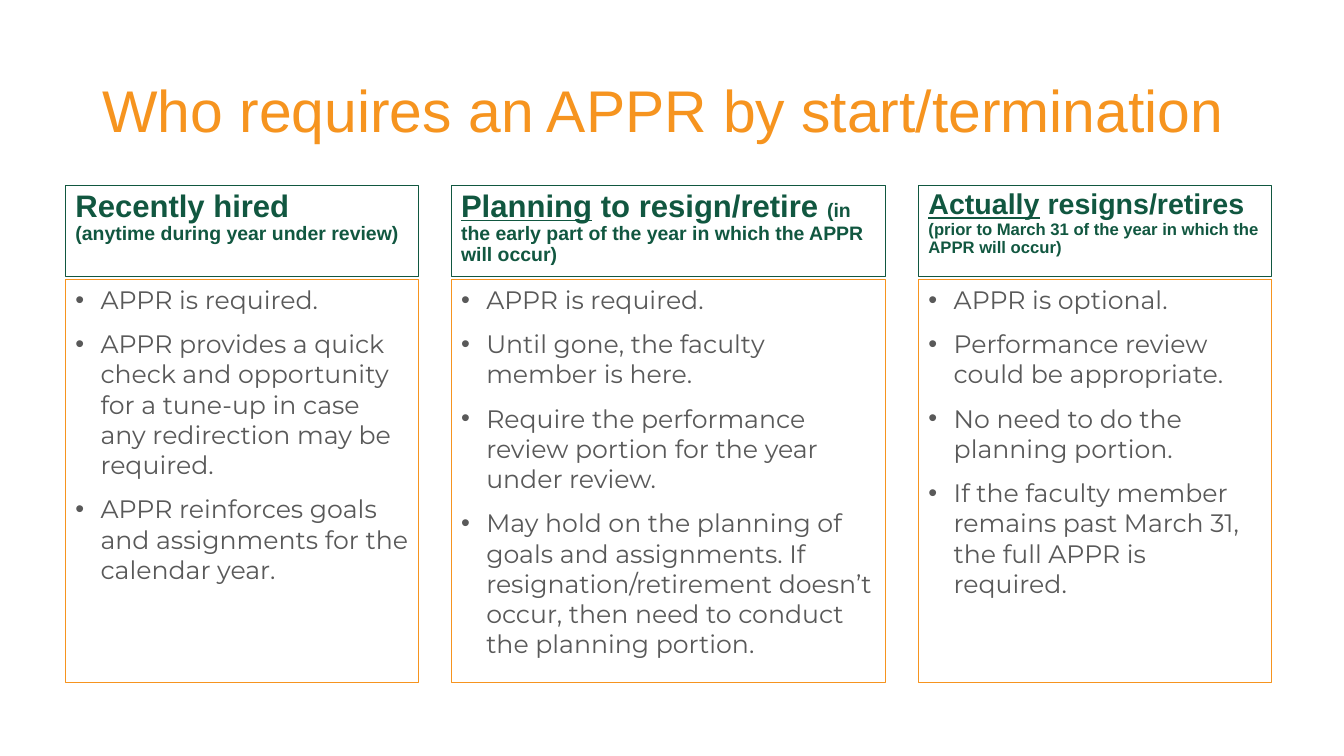
from dataclasses import dataclass

from lxml import etree
from pptx import Presentation, dml, util as u
from pptx.dml import color
from pptx.enum import shapes, text
from pptx.oxml import ns


@dataclass(frozen=True)
class Theme:
    """Colours, fonts and type sizes of the slide."""
    orange: str = "F6941F"
    green: str = "115740"
    grey: str = "595959"
    head_font: str = "Arial"
    body_font: str = "Montserrat"
    title_size: float = 42
    body_size: float = 18
    wide_head: tuple = (22.2, 13.9)
    small_head: tuple = (20.4, 11.9)


THEME = Theme()
LEFT, TOP, GAP = 1.65, 4.67, 0.83
HEAD_HEIGHT, BODY_OFFSET, BODY_HEIGHT = 2.29, 2.37, 10.16

COLUMNS = [
    (8.89, THEME.wide_head, "", "Recently hired ", True,
     "(anytime during year under review)",
     ["APPR is required.",
      "APPR provides a quick check and opportunity for a tune-up in case "
      "any redirection may be required.",
      "APPR reinforces goals and assignments for the calendar year."]),
    (10.95, THEME.wide_head, "Planning", " to resign/retire ", False,
     "(in the early part of the year in which the APPR will occur)",
     ["APPR is required.",
      "Until gone, the faculty member is here.",
      "Require the performance review portion for the year under review.",
      "May hold on the planning of goals and assignments. If "
      "resignation/retirement doesn’t occur, then need to conduct the "
      "planning portion."]),
    (8.89, THEME.small_head, "Actually", " resigns/retires ", False,
     "(prior to March 31 of the year in which the APPR will occur)",
     ["APPR is optional.",
      "Performance review could be appropriate.",
      "No need to do the planning portion.",
      "If the faculty member remains past March 31, the full APPR is "
      "required."]),
]


def add_text(p, content, size, font, rgb, bold=False, underline=False):
    """Append one formatted run to a paragraph."""
    r = p.add_run()
    r.text = content
    r.font.size, r.font.name = u.Pt(size), font
    r.font.bold, r.font.underline = bold, underline
    r.font.color.rgb = color.RGBColor.from_string(rgb)


def add_bullet(p):
    """Give a paragraph a hanging round bullet."""
    pPr = p._p.get_or_add_pPr()
    indent = u.Cm(0.635)
    pPr.set("marL", str(indent))
    pPr.set("indent", str(-indent))
    etree.SubElement(pPr, ns.qn("a:buFont")).set("typeface", "Arial")
    etree.SubElement(pPr, ns.qn("a:buChar")).set("char", "•")


def add_box(s, left, top, width, height, rgb):
    """Draw an outlined box and return its text frame."""
    sp = s.shapes.add_shape(shapes.MSO_SHAPE.RECTANGLE, u.Cm(left), u.Cm(top),
                            u.Cm(width), u.Cm(height))
    sp.shadow.inherit = False
    sp.fill.background()
    sp.line.color.rgb = color.RGBColor.from_string(rgb)
    sp.line.width = u.Pt(0.75)
    tf = sp.text_frame
    tf.word_wrap = True
    tf.vertical_anchor = text.MSO_ANCHOR.TOP
    return tf


def add_title(s, left, top, width, height):
    """Place and format the slide title."""
    sp = s.shapes.title
    sp.left, sp.top = u.Cm(left), u.Cm(top)
    sp.width, sp.height = u.Cm(width), u.Cm(height)
    tf = sp.text_frame
    tf.word_wrap = True
    tf.auto_size = text.MSO_AUTO_SIZE.NONE
    tf.vertical_anchor = text.MSO_ANCHOR.MIDDLE
    p = tf.paragraphs[0]
    p.alignment, p.line_spacing = text.PP_ALIGN.LEFT, 0.9
    add_text(p, "Who requires an APPR by start/termination",
             THEME.title_size, THEME.head_font, THEME.orange)


def add_heading(s, left, top, width, sizes, stressed, name, breaks, note):
    """Draw a column heading with its smaller note."""
    tf = add_box(s, left, top, width, HEAD_HEIGHT, THEME.green)
    p = tf.paragraphs[0]
    p.alignment, p.line_spacing = text.PP_ALIGN.LEFT, 0.9
    style = dict(font=THEME.head_font, rgb=THEME.green, bold=True)
    if stressed:
        add_text(p, stressed, sizes[0], underline=True, **style)
    add_text(p, name, sizes[0], **style)
    if breaks:
        p.add_line_break()
    add_text(p, note, sizes[1], **style)


def add_points(s, left, top, width, points):
    """Draw the box with the bullet points of a column."""
    tf = add_box(s, left, top, width, BODY_HEIGHT, THEME.orange)
    for i, point in enumerate(points):
        p = tf.add_paragraph() if i else tf.paragraphs[0]
        add_bullet(p)
        p.alignment = text.PP_ALIGN.LEFT
        p.space_before = u.Pt(10 if i else 0)
        add_text(p, point, THEME.body_size, THEME.body_font, THEME.grey)


def add_columns(s, left, top):
    """Place the columns side by side with equal gaps."""
    for width, *heading, points in COLUMNS:
        add_heading(s, left, top, width, *heading)
        add_points(s, left, top + BODY_OFFSET, width, points)
        left += width + GAP


def main():
    """Build and save the slide."""
    prs = Presentation()
    prs.slide_width, prs.slide_height = u.Cm(33.87), u.Cm(19.05)
    s = prs.slides.add_slide(prs.slide_layouts[5])
    add_title(s, 2.33, 1.01, 29.21, 3.68)
    add_columns(s, LEFT, TOP)
    prs.save("out.pptx")


if __name__ == "__main__":
    main()
